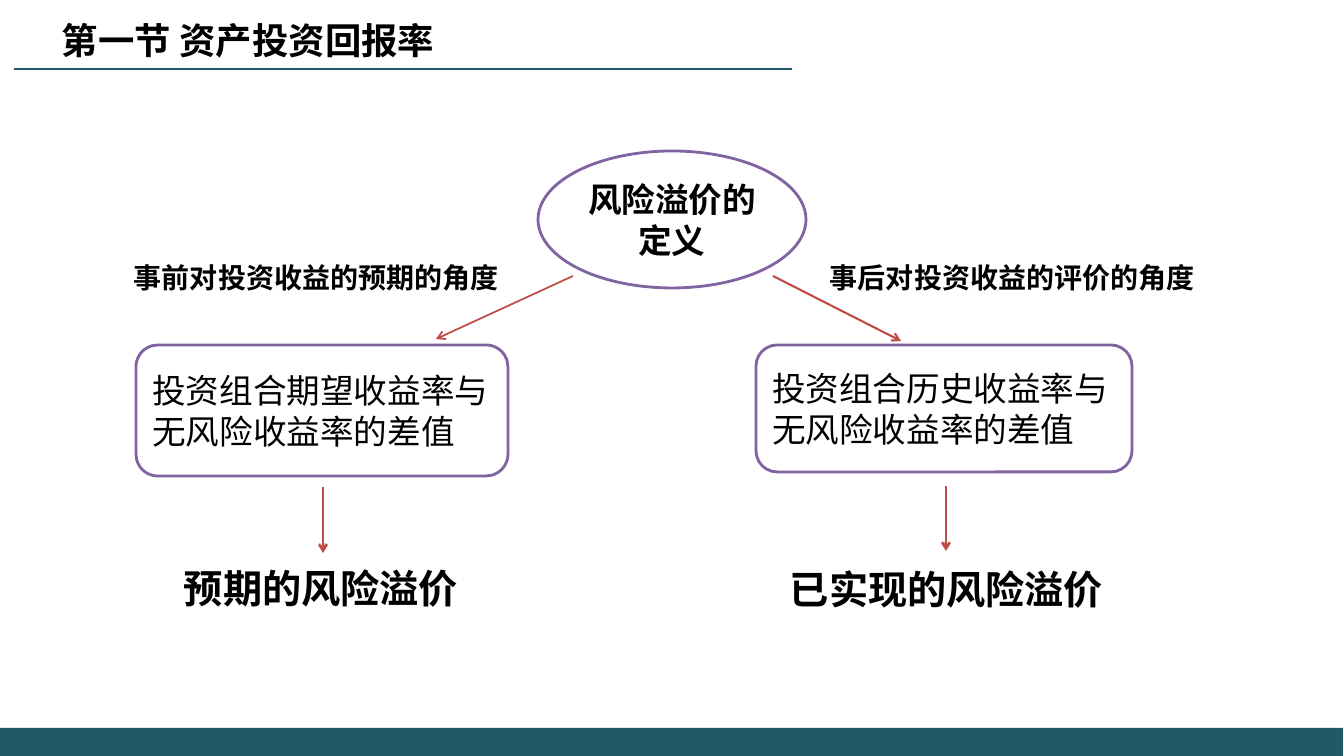
from lxml.etree import SubElement
from pptx import Presentation
from pptx.dml.color import RGBColor
from pptx.enum.shapes import MSO_CONNECTOR, MSO_SHAPE
from pptx.enum.text import MSO_ANCHOR, PP_ALIGN
from pptx.oxml.ns import qn
from pptx.util import Emu, Pt

# Content: places are (left, top, width, height), arrows (x1, y1, x2, y2), in px
TITLE = ("第一节 资产投资回报率", (52, 13, 445, 54))
ROOT = ("风险溢价的定义", (538, 151, 268, 137))
BRANCHES = [
    {
        "angle": ("事前对投资收益的预期的角度", (124, 256, 403, 44)),
        "definition": ("投资组合期望收益率与无风险收益率的差值", (136, 345, 372, 131)),
        "result": ("预期的风险溢价", (174, 559, 335, 57)),
        "from_root": ((573, 276, 436, 339), 1.25),
        "to_result": ((323, 487, 323, 553), 1.75),
    },
    {
        "angle": ("事后对投资收益的评价的角度", (820, 256, 420, 44)),
        "definition": ("投资组合历史收益率与无风险收益率的差值", (756, 345, 376, 127)),
        "result": ("已实现的风险溢价", (780, 560, 390, 57)),
        "from_root": ((773, 276, 901, 341), 1.5),
        "to_result": ((946, 486, 946, 551), 1.75),
    },
]

SANS, SERIF = "Noto Sans CJK SC", "Times New Roman"
TEAL = RGBColor(0x21, 0x59, 0x68)
PURPLE = RGBColor(0x80, 0x64, 0xA2)
RED = RGBColor(0xBF, 0x4C, 0x48)
BLACK = RGBColor(0, 0, 0)
WHITE = RGBColor(255, 255, 255)
WIDTH, HEIGHT = 1344, 756


def px(*lengths):
    return [Emu(round(length * 914400 / 100.8)) for length in lengths]


def write(shape, text, size, bold=True, font=SANS, align=PP_ALIGN.LEFT):
    frame = shape.text_frame
    frame.word_wrap = True
    para = frame.paragraphs[0]
    para.text = text
    para.alignment = align
    para.font.size = Pt(size)
    para.font.bold = bold
    para.font.name = font
    para.font.color.rgb = BLACK
    defaults = para._p.pPr.find(qn("a:defRPr"))
    SubElement(defaults, qn("a:ea")).set("typeface", SANS)


def add_label(page, content, size):
    text, place = content
    write(page.shapes.add_textbox(*px(*place)), text, size)


def add_block(page, kind, place, fill, outline=None):
    block = page.shapes.add_shape(kind, *px(*place))
    block.shadow.inherit = False
    block.fill.solid()
    block.fill.fore_color.rgb = fill
    if outline is None:
        block.line.fill.background()
    else:
        block.line.color.rgb = outline
        block.line.width = Pt(2)
    block.text_frame.vertical_anchor = MSO_ANCHOR.MIDDLE
    return block


def add_line(page, ends, weight, color, arrow=False):
    line = page.shapes.add_connector(MSO_CONNECTOR.STRAIGHT, *px(*ends))
    line.line.color.rgb = color
    line.line.width = Pt(weight)
    if arrow:
        SubElement(line.line._get_or_add_ln(), qn("a:tailEnd")).set("type", "arrow")
    SubElement(line._element.spPr, qn("a:effectLst"))


deck = Presentation()
deck.slide_width, deck.slide_height = px(WIDTH, HEIGHT)
page = deck.slides.add_slide(deck.slide_layouts[6])

# Footer band, title and its rule
add_block(page, MSO_SHAPE.RECTANGLE, (0, 728, 1343, 28), TEAL)
add_line(page, (792, 69, 14, 69), 1.5, TEAL)
add_label(page, TITLE, 26)

# Root of the tree
root_text, root_place = ROOT
root = add_block(page, MSO_SHAPE.OVAL, root_place, WHITE, PURPLE)
write(root, root_text, 24, font=SERIF, align=PP_ALIGN.CENTER)

# Two branches: angle, definition, result
for branch in BRANCHES:
    for step in ("from_root", "to_result"):
        ends, weight = branch[step]
        add_line(page, ends, weight, RED, arrow=True)
    add_label(page, branch["angle"], 20)
    text, place = branch["definition"]
    definition = add_block(page, MSO_SHAPE.ROUNDED_RECTANGLE, place, WHITE, PURPLE)
    write(definition, text, 24, bold=False)
    add_label(page, branch["result"], 28)

deck.save("out.pptx")
